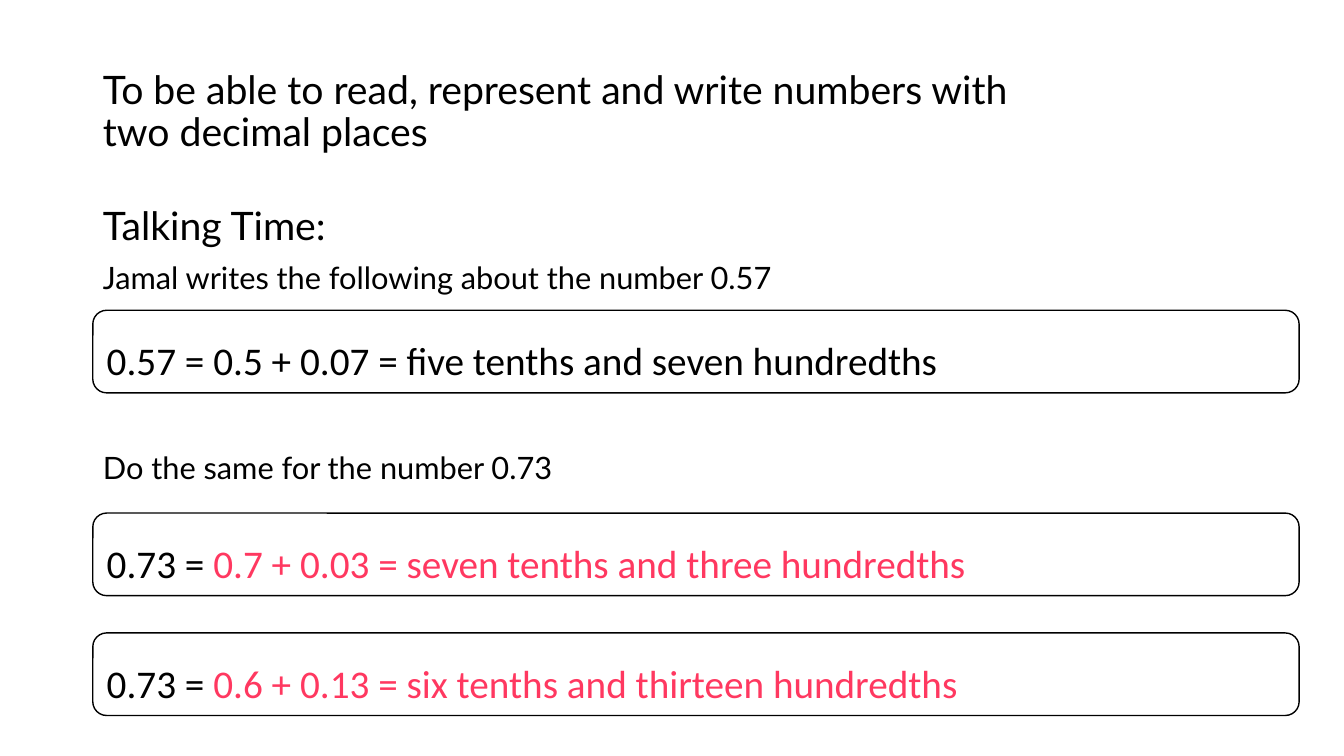
from pptx import Presentation
from pptx.dml.color import RGBColor
from pptx.enum.shapes import MSO_SHAPE as Shape
from pptx.enum.text import MSO_ANCHOR as Anchor, MSO_AUTO_SIZE as AutoSize, PP_ALIGN as Align
from pptx.util import Cm, Pt
from lxml.etree import SubElement
from pptx.oxml.ns import qn

BLACK, WHITE, PINK = "000000", "FFFFFF", "FF3860"
LEFT = 2.34


def color(value):
    """Turn a hex string into a colour."""
    return RGBColor.from_string(value)


def apply(target, formats):
    """Set every attribute named in a dict of formats."""
    for name, value in formats.items():
        setattr(target, name, value)


def place(shape, left, top, width, height):
    """Move and size a shape in centimetres."""
    apply(shape, {"left": Cm(left), "top": Cm(top), "width": Cm(width), "height": Cm(height)})


def write(para, spans, font, size, spacing, before=0):
    """Fill a paragraph with coloured spans in one font and size."""
    apply(para, {"alignment": Align.LEFT, "line_spacing": spacing,
                 "space_before": Pt(before), "space_after": Pt(0)})
    for text, ink in spans:
        span = para.add_run()
        span.text = text
        apply(span.font, {"name": font, "size": Pt(size)})
        span.font.color.rgb = color(ink)


def set_title(page, text):
    """Place and write the lesson objective in the title."""
    title = page.shapes.title
    place(title, LEFT, 1.01, 24.38, 3.68)
    frame = title.text_frame
    apply(frame, {"word_wrap": True, "auto_size": AutoSize.NONE, "vertical_anchor": Anchor.MIDDLE})
    write(frame.paragraphs[0], [(text, BLACK)], "Lato", 28, 0.9)


def set_body(page, lines):
    """Place the body and write its unbulleted lines."""
    body = page.placeholders[1]
    place(body, LEFT, 5.07, 29.21, 12.09)
    frame = body.text_frame
    apply(frame, {"word_wrap": True, "auto_size": AutoSize.NONE, "vertical_anchor": Anchor.TOP})
    for index, (text, size, before) in enumerate(lines):
        para = frame.add_paragraph() if index else frame.paragraphs[0]
        write(para, [(text, BLACK)], "Lato", size, 0.9, before)
        properties = para._p.get_or_add_pPr()
        properties.set("marL", "0")
        properties.set("indent", "0")
        SubElement(properties, qn("a:buNone"))


def add_statement(page, top, spans):
    """Add a rounded box that holds one number statement."""
    box = page.shapes.add_shape(Shape.ROUNDED_RECTANGLE, Cm(LEFT), Cm(top), Cm(30.4), Cm(2.08))
    box.shadow.inherit = False
    box.fill.solid()
    box.fill.fore_color.rgb = color(WHITE)
    box.line.color.rgb = color(BLACK)
    box.line.width = Pt(1)
    apply(box.text_frame, {"word_wrap": True, "vertical_anchor": Anchor.BOTTOM})
    write(box.text_frame.paragraphs[0], spans, "Calibri", 28, 1.5)


def main():
    """Build the decimal places slide."""
    deck = Presentation()
    apply(deck, {"slide_width": Cm(33.87), "slide_height": Cm(19.05)})
    page = deck.slides.add_slide(deck.slide_layouts[1])
    set_title(page, "To be able to read, represent and write numbers with two decimal places")
    set_body(page, [
        ("Talking Time:", 28, 0),
        ("Jamal writes the following about the number 0.57", 22, 10),
        ("Do the same for the number 0.73", 22, 112),
    ])
    statements = [
        (7.82, [("0.57 = 0.5 + 0.07 = five tenths and seven hundredths", BLACK)]),
        (12.93, [("0.73 = ", BLACK), ("0.7 + 0.03 = seven tenths and three hundredths", PINK)]),
        (15.95, [("0.73 = ", BLACK), ("0.6 + 0.13 = six tenths and thirteen hundredths", PINK)]),
    ]
    for top, spans in statements:
        add_statement(page, top, spans)
    deck.save("out.pptx")


if __name__ == "__main__":
    main()
